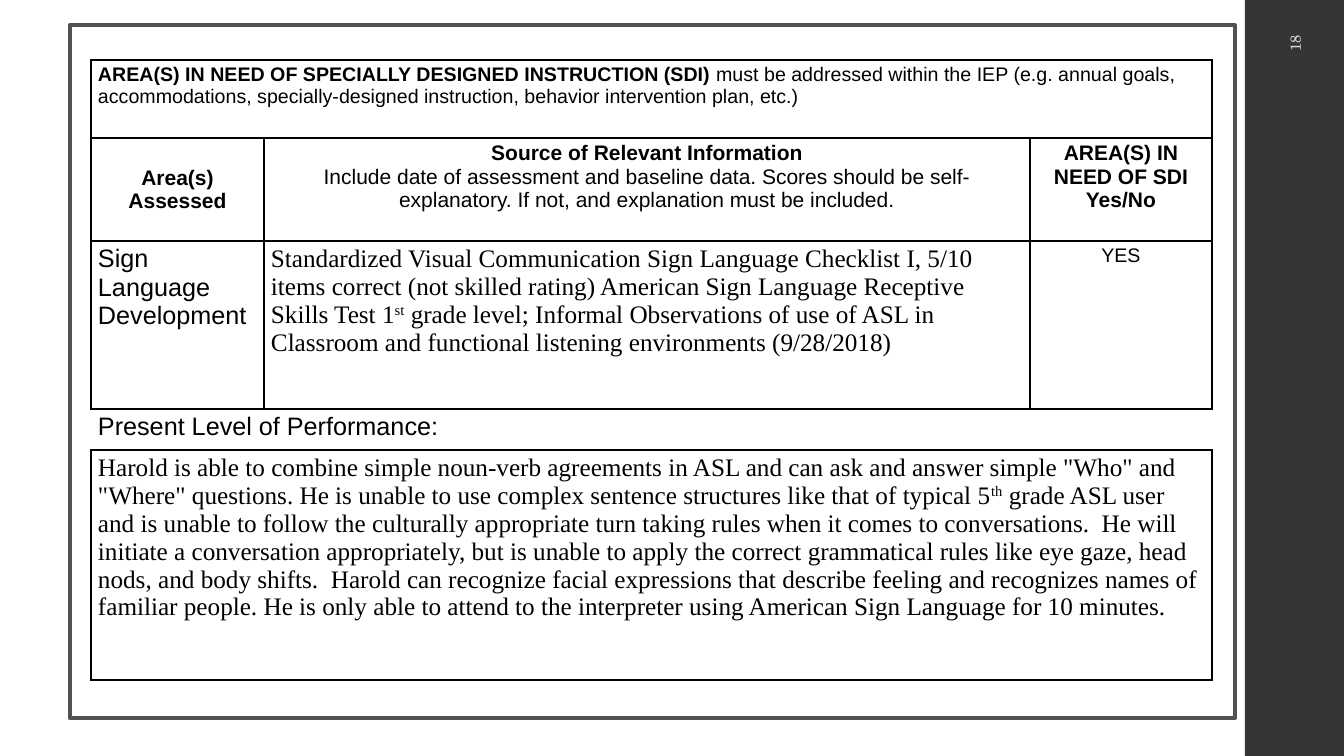
from lxml.etree import SubElement
from pptx import Presentation
from pptx.dml.color import RGBColor
from pptx.enum.shapes import MSO_SHAPE as Shape
from pptx.enum.text import MSO_ANCHOR as Anchor, PP_ALIGN as Align
from pptx.oxml.ns import qn
from pptx.util import Emu, Pt

SLIDE_WIDTH, SLIDE_HEIGHT = 1344, 756
EMU_PER_PX = 12192000 / SLIDE_WIDTH

BLACK = RGBColor(0x00, 0x00, 0x00)
CHARCOAL = RGBColor(0x35, 0x35, 0x37)
FRAME_GREY = RGBColor(0x52, 0x52, 0x56)
PALE_GREY = RGBColor(0xD9, 0xD9, 0xDB)

SANS, SERIF, NUMBER_FONT = "Arial", "Times New Roman", "TeX Gyre Schola"


def px(length):
    return Emu(round(length * EMU_PER_PX))


def style(size, name=SANS, bold=False, color=BLACK):
    return {"size": Pt(size), "name": name, "bold": bold, "color": color}


NOTE, NOTE_BOLD = style(14), style(14, bold=True)
HEAD, HEAD_BOLD = style(15), style(15, bold=True)
LABEL, BODY = style(18), style(18, SERIF)
SUPERSCRIPT = {**BODY, "baseline": 30000}
PAGE_NUMBER = style(10.5, NUMBER_FONT, color=PALE_GREY)


class SlideBuilder:
    cell_margins = {"margin_left": px(7), "margin_right": px(7),
                    "margin_top": px(4), "margin_bottom": px(4)}

    def __init__(self, presentation):
        self.slide = presentation.slides.add_slide(presentation.slide_layouts[6])

    def rectangle(self, box, fill=None, line=None, line_width=0):
        shape = self.slide.shapes.add_shape(Shape.RECTANGLE, *map(px, box))
        shape.shadow.inherit = False
        if fill is None:
            shape.fill.background()
        else:
            shape.fill.solid()
            shape.fill.fore_color.rgb = fill
        if line is None:
            shape.line.fill.background()
        else:
            shape.line.color.rgb = line
            shape.line.width = Pt(line_width)

    def fill_text(self, frame, paragraphs, align=Align.LEFT):
        for index, runs in enumerate(paragraphs):
            paragraph = frame.add_paragraph() if index else frame.paragraphs[0]
            paragraph.alignment = align
            for text, font_values in runs:
                run = paragraph.add_run()
                run.text = text
                for key, value in font_values.items():
                    if key == "color":
                        run.font.color.rgb = value
                    elif key == "baseline":
                        run._r.get_or_add_rPr().set("baseline", str(value))
                    else:
                        setattr(run.font, key, value)

    def text(self, box, paragraphs, align, rotation=0):
        shape = self.slide.shapes.add_textbox(*map(px, box))
        shape.rotation = rotation
        shape.text_frame.word_wrap = True
        shape.text_frame.vertical_anchor = Anchor.MIDDLE
        self.fill_text(shape.text_frame, paragraphs, align)

    def border(self, cell, sides):
        properties = cell._tc.get_or_add_tcPr()
        for side in "LRTB":
            line = SubElement(properties, qn(f"a:ln{side}"), w=str(Pt(1)))
            if side in sides:
                fill = SubElement(line, qn("a:solidFill"))
                SubElement(fill, qn("a:srgbClr"), val=str(BLACK))
            else:
                SubElement(line, qn("a:noFill"))

    def table(self, left, top, widths, heights, rows, open_row):
        box = left, top, sum(widths), sum(heights)
        table = self.slide.shapes.add_table(
            len(heights), len(widths), *map(px, box)).table
        table.first_row = table.horz_banding = False
        for column, width in zip(table.columns, widths):
            column.width = px(width)
        for index, (row, height, contents) in enumerate(
                zip(table.rows, heights, rows)):
            row.height = px(height)
            for cell in row.cells:
                self.border(cell, "TB" if index == open_row else "LRTB")
                cell.fill.background()
            if len(contents) == 1:
                table.cell(index, 0).merge(table.cell(index, len(widths) - 1))
            for cell, (paragraphs, align, anchor) in zip(row.cells, contents):
                for key, value in self.cell_margins.items():
                    setattr(cell, key, value)
                cell.vertical_anchor = anchor
                self.fill_text(cell.text_frame, paragraphs, align)


def entry(*paragraphs, align=Align.LEFT, anchor=Anchor.TOP):
    return paragraphs, align, anchor


IEP_ROWS = [
    [entry([
        ("AREA(S) IN NEED OF SPECIALLY DESIGNED INSTRUCTION (SDI) ", NOTE_BOLD),
        ("must be addressed within the IEP (e.g. annual goals, accommodations, "
         "specially-designed instruction, behavior intervention plan, etc.)", NOTE),
    ])],
    [
        entry([("Area(s) Assessed", HEAD_BOLD)],
              align=Align.CENTER, anchor=Anchor.MIDDLE),
        entry([("Source of Relevant Information", HEAD_BOLD)],
              [("Include date of assessment and baseline data. Scores should be "
                "self-explanatory. If not, and explanation must be included.", HEAD)],
              align=Align.CENTER),
        entry([("AREA(S) IN NEED OF SDI Yes/No", HEAD_BOLD)], align=Align.CENTER),
    ],
    [
        entry([("Sign Language Development", LABEL)]),
        entry([
            ("Standardized Visual Communication Sign Language Checklist I, 5/10 "
             "items correct (not skilled rating) American Sign Language Receptive "
             "Skills Test 1", BODY),
            ("st", SUPERSCRIPT),
            (" grade level; Informal Observations of use of ASL in Classroom and "
             "functional listening environments (9/28/2018)", BODY),
        ]),
        entry([("YES", NOTE)], align=Align.CENTER),
    ],
    [entry([("Present Level of Performance:", LABEL)])],
    [entry([
        ("Harold is able to combine simple noun-verb agreements in ASL and can ask "
         "and answer simple \"Who\" and \"Where\" questions. He is unable to use "
         "complex sentence structures like that of typical 5", BODY),
        ("th", SUPERSCRIPT),
        (" grade ASL user and is unable to follow the culturally appropriate turn "
         "taking rules when it comes to conversations.  He will initiate a "
         "conversation appropriately, but is unable to apply the correct "
         "grammatical rules like eye gaze, head nods, and body shifts.  Harold can "
         "recognize facial expressions that describe feeling and recognizes names "
         "of familiar people. He is only able to attend to the interpreter using "
         "American Sign Language for 10 minutes.", BODY),
    ])],
]


def main():
    presentation = Presentation()
    presentation.slide_width = px(SLIDE_WIDTH)
    presentation.slide_height = px(SLIDE_HEIGHT)
    builder = SlideBuilder(presentation)
    builder.rectangle((1245, 0, 99, SLIDE_HEIGHT), fill=CHARCOAL)
    builder.table(91, 60, (173, 766, 182), (78, 103, 168, 41, 230),
                  IEP_ROWS, open_row=3)
    builder.text((1190, 110, 210, 40), [[("18", PAGE_NUMBER)]],
                 Align.RIGHT, rotation=270)
    builder.rectangle((70, 25, 1165, 693), line=FRAME_GREY, line_width=3)
    presentation.save("out.pptx")


if __name__ == "__main__":
    main()
